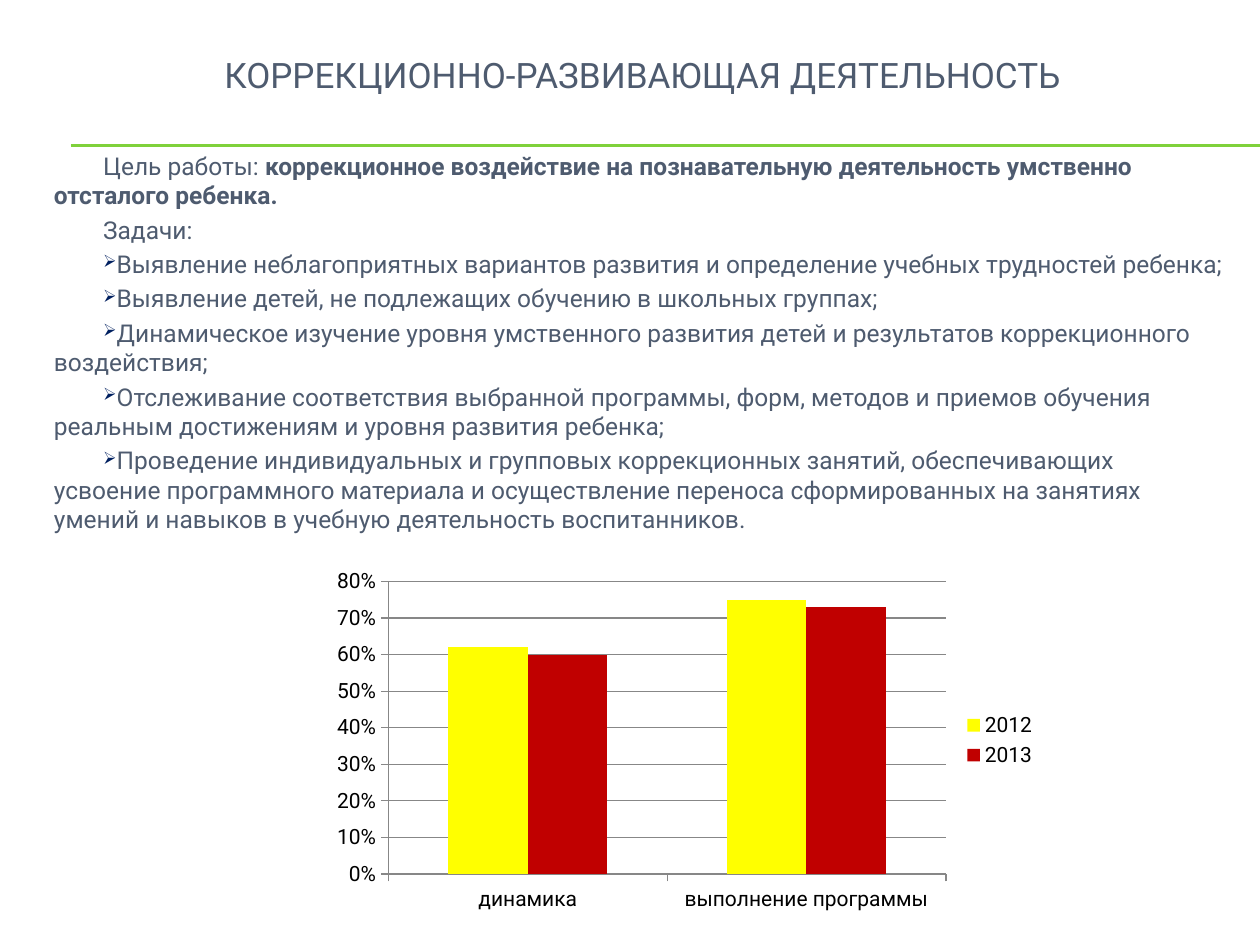
from lxml import etree
from pptx import Presentation
from pptx.chart.data import CategoryChartData
from pptx.dml.color import RGBColor
from pptx.enum.chart import XL_CHART_TYPE, XL_LEGEND_POSITION, XL_TICK_MARK
from pptx.enum.shapes import MSO_CONNECTOR
from pptx.enum.text import MSO_ANCHOR, PP_ALIGN
from pptx.oxml.ns import qn
from pptx.util import Inches, Pt

COLUMNS = XL_CHART_TYPE.COLUMN_CLUSTERED
LEGEND_RIGHT = XL_LEGEND_POSITION.RIGHT
TICK_OUT = XL_TICK_MARK.OUTSIDE
STRAIGHT = MSO_CONNECTOR.STRAIGHT
MIDDLE, TOP = MSO_ANCHOR.MIDDLE, MSO_ANCHOR.TOP
CENTER, LEFT = PP_ALIGN.CENTER, PP_ALIGN.LEFT

FONT = "Roboto"
COLORS = {
    "text": "4E5B6F",
    "bullet": "002060",
    "rule": "7FD13B",
    "axis": "878787",
    "chart_text": "000000",
    "2012": "FFFF00",
    "2013": "C00000",
}

TITLE = "КОРРЕКЦИОННО-РАЗВИВАЮЩАЯ ДЕЯТЕЛЬНОСТЬ"
GOAL_LABEL = "Цель работы: "
GOAL = ("коррекционное воздействие на познавательную деятельность "
        "умственно отсталого ребенка.")
TASKS_LABEL = "Задачи:"
TASKS = [
    "Выявление неблагоприятных вариантов развития и определение учебных "
    "трудностей ребенка;",
    "Выявление детей, не подлежащих обучению в школьных группах;",
    "Динамическое изучение уровня умственного развития детей и результатов "
    "коррекционного воздействия;",
    "Отслеживание соответствия выбранной программы, форм, методов и приемов "
    "обучения реальным достижениям и уровня развития ребенка;",
    "Проведение индивидуальных и групповых коррекционных занятий, "
    "обеспечивающих усвоение программного материала и осуществление переноса "
    "сформированных на занятиях умений и навыков в учебную деятельность "
    "воспитанников.",
]
CATEGORIES = ["динамика", "выполнение программы"]
RESULTS = {"2012": [0.62, 0.75], "2013": [0.60, 0.73]}


def rgb(name):
    return RGBColor.from_string(COLORS[name])


def set_font(font, size, color, bold=False):
    font.name = FONT
    font.size = Pt(size)
    font.bold = bold
    font.color.rgb = rgb(color)


def add_run(p, text, size, bold=False):
    r = p.add_run()
    r.text = text
    set_font(r.font, size, "text", bold)


def add_rule(slide, y):
    line = slide.shapes.add_connector(
        STRAIGHT, Inches(0.56), Inches(y), Inches(10), Inches(y))
    line.line.color.rgb = rgb("rule")
    line.line.width = Pt(0.75)
    etree.SubElement(line._element.spPr, qn("a:effectLst"))


def set_title(slide):
    sp = slide.shapes.title
    sp.left, sp.top = Inches(0.35), Inches(0.13)
    sp.width, sp.height = Inches(9.5), Inches(0.92)
    tf = sp.text_frame
    tf.vertical_anchor = MIDDLE
    p = tf.paragraphs[0]
    p.alignment = CENTER
    add_run(p, TITLE, 20)


def add_bullet(p):
    pPr = p._p.get_or_add_pPr()
    color = etree.SubElement(pPr, qn("a:buClr"))
    etree.SubElement(color, qn("a:srgbClr"), val=COLORS["bullet"])
    etree.SubElement(pPr, qn("a:buSzPct"), val="70000")
    etree.SubElement(pPr, qn("a:buChar"), char="➢")


def add_body(slide):
    sp = slide.shapes.add_textbox(
        Inches(0.33), Inches(1.15), Inches(9.5), Inches(6.14))
    tf = sp.text_frame
    tf.word_wrap = True
    tf.vertical_anchor = TOP
    # Each paragraph: its runs as (text, bold), and whether it has a bullet
    content = [([(GOAL_LABEL, False), (GOAL, True)], False),
               ([(TASKS_LABEL, False)], False)]
    content += [([(task, False)], True) for task in TASKS]
    for i, (runs, bulleted) in enumerate(content):
        p = tf.add_paragraph() if i else tf.paragraphs[0]
        p.alignment = LEFT
        p.space_before = Pt(2.8)
        pPr = p._p.get_or_add_pPr()
        pPr.set("marL", "0")
        pPr.set("indent", str(Inches(0.39)))
        if bulleted:
            add_bullet(p)
        for text, bold in runs:
            add_run(p, text, 14, bold)


def style_axis(axis):
    set_font(axis.tick_labels.font, 12, "chart_text")
    axis.major_tick_mark = TICK_OUT
    axis.format.line.color.rgb = rgb("axis")
    axis.format.line.width = Pt(0.75)


def add_results_chart(slide):
    data = CategoryChartData(number_format="0%")
    data.categories = CATEGORIES
    for year, values in RESULTS.items():
        data.add_series(year, values)
    chart = slide.shapes.add_chart(
        COLUMNS, Inches(2.56), Inches(4.46), Inches(5.77), Inches(2.83),
        data).chart
    set_font(chart.font, 18, "chart_text")
    chart.has_title = False

    # Columns
    plot = chart.plots[0]
    plot.gap_width = 150
    plot.overlap = 0
    plot.vary_by_categories = False
    for series in plot.series:
        series.format.fill.solid()
        series.format.fill.fore_color.rgb = rgb(series.name)

    # Axes
    style_axis(chart.category_axis)
    axis = chart.value_axis
    style_axis(axis)
    axis.minimum_scale, axis.maximum_scale = 0, 0.8
    axis.major_unit = 0.1
    axis.tick_labels.number_format = "0%"
    axis.tick_labels.number_format_is_linked = False
    axis.has_major_gridlines = True
    axis.major_gridlines.format.line.color.rgb = rgb("axis")
    axis.major_gridlines.format.line.width = Pt(0.75)

    # Legend
    chart.has_legend = True
    chart.legend.position = LEGEND_RIGHT
    chart.legend.include_in_layout = False
    set_font(chart.legend.font, 12, "chart_text")


def main():
    prs = Presentation()
    prs.slide_width, prs.slide_height = Inches(10), Inches(7.5)
    s = prs.slides.add_slide(prs.slide_layouts[5])
    for y in (1.15, 1.16):
        add_rule(s, y)
    set_title(s)
    add_body(s)
    add_results_chart(s)
    prs.save("out.pptx")


if __name__ == "__main__":
    main()
